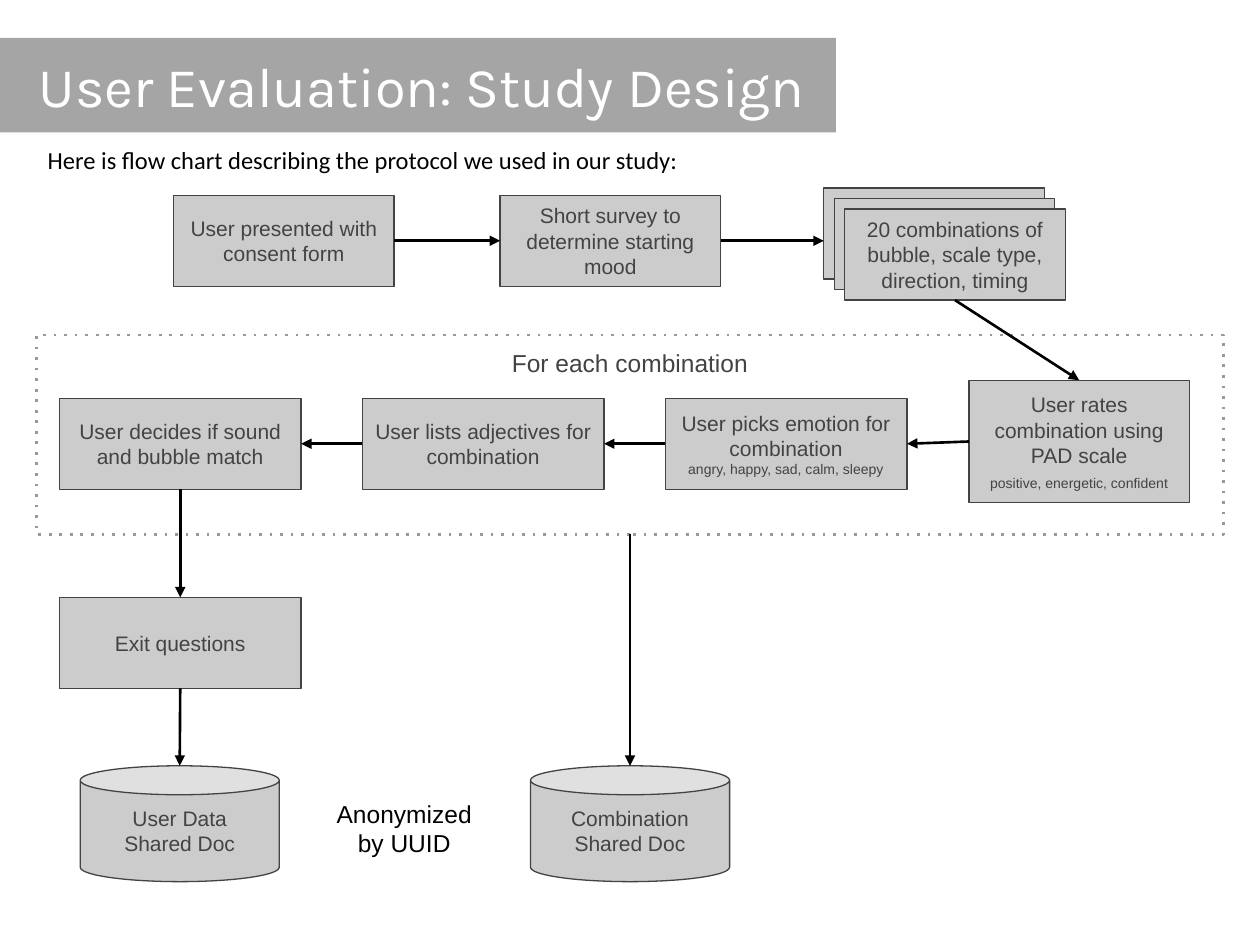
from dataclasses import dataclass
from lxml.etree import SubElement
from pptx import Presentation
from pptx.dml.color import RGBColor as RGB
from pptx.enum.shapes import MSO_CONNECTOR as Connector, MSO_SHAPE as Preset
from pptx.enum.text import MSO_ANCHOR as Anchor, PP_ALIGN as Align
from pptx.oxml.ns import qn
from pptx.util import Pt


@dataclass(frozen=True)
class Theme:
    banner: RGB = RGB(0xA5, 0xA5, 0xA5)
    step: RGB = RGB(0xCC, 0xCC, 0xCC)
    ink: RGB = RGB(0x43, 0x43, 0x43)
    dots: RGB = RGB(0x99, 0x99, 0x99)
    black: RGB = RGB(0, 0, 0)
    white: RGB = RGB(0xFF, 0xFF, 0xFF)
    title_size: float = 32
    heading_size: float = 14
    step_size: float = 12
    note_size: float = 8
    title_font: str = "Karla"
    body_font: str = "Arial"
    intro_font: str = "Calibri"
    thin: float = 0.75
    thick: float = 1.5


def assign(target, values):
    for name, value in values.items():
        setattr(target, name, value)


def top(part):
    return part.left + part.width // 2, part.top


def bottom(part):
    return part.left + part.width // 2, part.top + part.height


def left(part):
    return part.left, part.top + part.height // 2


def right(part):
    return part.left + part.width, part.top + part.height // 2


class FlowSlide:
    def __init__(self, slide, theme):
        self.slide = slide
        self.theme = theme

    def fill_text(self, part, paragraphs, size, color, font=None,
                  align=Align.CENTER, anchor=Anchor.MIDDLE, inset=7.2):
        frame = part.text_frame
        assign(frame, dict(word_wrap=True, vertical_anchor=anchor,
                           margin_left=Pt(inset), margin_right=Pt(7.2),
                           margin_top=Pt(7.2), margin_bottom=Pt(7.2)))
        for index, words in enumerate(paragraphs):
            paragraph = frame.add_paragraph() if index else frame.paragraphs[0]
            paragraph.alignment = align
            run = paragraph.add_run()
            run.text = words
            assign(run.font, dict(size=Pt(size), name=font or self.theme.body_font))
            run.font.color.rgb = color

    def shape(self, box, fill=None, line=None, width=None, preset=Preset.RECTANGLE):
        part = self.slide.shapes.add_shape(preset, *map(Pt, box))
        part.shadow.inherit = False
        for paint, color in ((part.fill, fill), (part.line.fill, line)):
            if color is None:
                paint.background()
            else:
                paint.solid()
                paint.fore_color.rgb = color
        if line is not None:
            part.line.width = Pt(width)
        return part

    def banner(self, box, words):
        look = self.theme
        part = self.shape(box, look.banner)
        self.fill_text(part, [words], look.title_size, look.white, look.title_font,
                       Align.LEFT, inset=22)

    def loop_frame(self, box, words):
        look = self.theme
        part = self.shape(box, line=look.dots, width=look.thick)
        SubElement(part._element.spPr.find(qn("a:ln")), qn("a:prstDash"), val="dot")
        self.fill_text(part, [words], look.heading_size, look.ink, anchor=Anchor.TOP)
        return part

    def step(self, box, *paragraphs, note=None, note_gap=0, preset=Preset.RECTANGLE):
        look = self.theme
        part = self.shape(box, look.step, look.ink, look.thin, preset)
        lines = [*paragraphs, note] if note else paragraphs
        self.fill_text(part, lines, look.step_size, look.ink)
        if note:
            last = part.text_frame.paragraphs[-1]
            last.space_before = Pt(note_gap)
            last.runs[0].font.size = Pt(look.note_size)
        return part

    def store(self, box, *paragraphs):
        return self.step(box, *paragraphs, preset=Preset.CAN)

    def label(self, box, words, font=None, align=Align.CENTER):
        part = self.slide.shapes.add_textbox(*map(Pt, box))
        self.fill_text(part, [words], self.theme.heading_size, self.theme.black, font,
                       align, Anchor.TOP)

    def arrow(self, start, end):
        link = self.slide.shapes.add_connector(Connector.STRAIGHT, *start, *end)
        link.line.width = Pt(self.theme.thick)
        link.line.color.rgb = self.theme.black
        properties = link._element.spPr
        SubElement(properties.find(qn("a:ln")), qn("a:tailEnd"), type="triangle")
        SubElement(properties, qn("a:effectLst"))


def main():
    deck = Presentation()
    assign(deck, dict(slide_width=Pt(720), slide_height=Pt(540)))
    theme = Theme()
    flow = FlowSlide(deck.slides.add_slide(deck.slide_layouts[6]), theme)

    flow.banner((0, 21.6, 477.6, 54), "User Evaluation: Study Design")
    loop = flow.loop_frame((20.9, 191.5, 678.2, 113.8), "For each combination")

    start_size, loop_size, store_size = (126, 52), (138.2, 52), (113.8, 66.2)
    consent = flow.step((99.2, 111.6, *start_size), "User presented with consent form")
    survey = flow.step((285.8, 111.6, *start_size),
                       "Short survey to determine starting mood")
    sheets = [(470.7 + 6 * layer, 107.5 + 6 * layer, *start_size) for layer in range(3)]
    first_sheet = flow.step(sheets[0])
    flow.step(sheets[1])
    combinations = flow.step(sheets[2],
                             "20 combinations of bubble, scale type, direction, timing")

    match_box, adjectives_box, emotion_box = (
        (33.9 + 173.1 * column, 227.6, *loop_size) for column in range(3))
    rating = flow.step((553.7, 217.3, 126, 70), "User rates combination using PAD scale",
                       note="positive, energetic, confident", note_gap=4)
    emotion = flow.step(emotion_box, "User picks emotion for combination",
                        note="angry, happy, sad, calm, sleepy")
    adjectives = flow.step(adjectives_box, "User lists adjectives for combination")
    match = flow.step(match_box, "User decides if sound and bubble match")

    exit_questions = flow.step((33.9, 341.4, *loop_size), "Exit questions")
    user_data = flow.store((45.8, 437.6, *store_size), "User Data", "Shared Doc")
    combination_data = flow.store((303.1, 437.6, *store_size), "Combination Shared Doc")

    for source, target in ((consent, survey), (survey, first_sheet)):
        flow.arrow(right(source), (target.left, right(source)[1]))
    for source, target in ((rating, emotion), (emotion, adjectives), (adjectives, match)):
        flow.arrow(left(source), right(target))
    for source, target in ((combinations, rating), (match, exit_questions),
                           (exit_questions, user_data), (loop, combination_data)):
        flow.arrow(bottom(source), top(target))

    flow.label((177, 449.3, 108, 48.2), "Anonymized by UUID")
    flow.label((20.2, 75.6, 509, 85.7),
               "Here is flow chart describing the protocol we used in our study:",
               theme.intro_font, Align.LEFT)
    deck.save("out.pptx")


if __name__ == "__main__":
    main()
